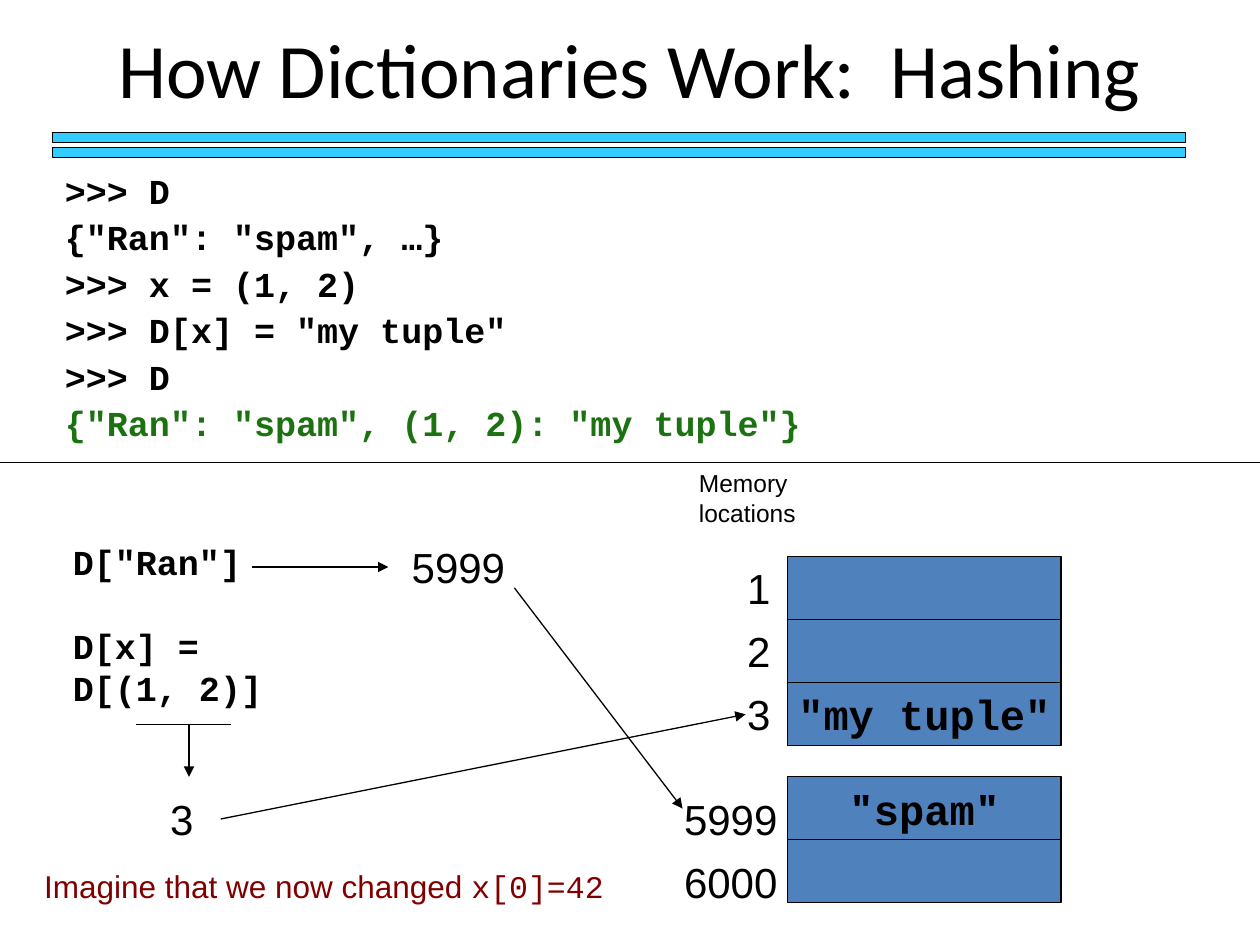
from lxml.etree import SubElement as Sub
from pptx import Presentation as Deck
from pptx.dml.color import RGBColor as Rgb
from pptx.enum.shapes import MSO_CONNECTOR as Wire, MSO_SHAPE as Form
from pptx.enum.text import MSO_ANCHOR as Anchor, PP_ALIGN as Align
from pptx.oxml.ns import qn
from pptx.util import Cm, Pt

BLACK = Rgb(0, 0, 0)
GREEN = Rgb(0x1C, 0x72, 0x10)
RED = Rgb(0x80, 0, 0)
CYAN = Rgb(0x33, 0xCC, 0xFF)
BLUE = Rgb(0x4F, 0x81, 0xBD)

PLAIN = {"name": "Arial", "size": Pt(24), "color": BLACK}
HEAD = {**PLAIN, "name": "Calibri", "size": Pt(44)}
SMALL = {**PLAIN, "size": Pt(14)}
CODE = {**PLAIN, "name": "Courier New", "size": Pt(20), "bold": True}
CELL = {**CODE, "size": Pt(24)}
QUOTE = {**CELL, "name": "Noto Sans Mono"}
NOTE = {**PLAIN, "size": Pt(18), "color": RED}

STEP = 1.27
LEFT = 15.88
TOP = 11.22
LOW = 15.66


def apply(item, form):
    for key, value in form.items():
        if key == "color":
            item.color.rgb = value
        else:
            setattr(item, key, value)


def write(frame, lines, para=None):
    for i, line in enumerate(lines):
        p = frame.paragraphs[0] if i == 0 else frame.add_paragraph()
        apply(p, para or {})
        for text, form in line:
            run = p.add_run()
            run.text = text
            apply(run.font, form)


def label(slide, box, lines, para=None, wrap=False, anchor=Anchor.TOP):
    frame = slide.shapes.add_textbox(*map(Cm, box)).text_frame
    apply(frame, {"word_wrap": wrap, "vertical_anchor": anchor})
    write(frame, lines, para)
    return frame


def block(shapes, box, fill, runs=()):
    shape = shapes.add_shape(Form.RECTANGLE, *map(Cm, box))
    shape.shadow.inherit = False
    shape.fill.solid()
    shape.fill.fore_color.rgb = fill
    apply(shape.line, {"color": BLACK, "width": Pt(0.75)})
    if runs:
        frame = shape.text_frame
        apply(frame, {"word_wrap": False, "vertical_anchor": Anchor.MIDDLE})
        write(frame, [runs], {"alignment": Align.CENTER})


def link(slide, ends, arrow=True):
    line = slide.shapes.add_connector(Wire.STRAIGHT, *map(Cm, ends))
    apply(line.line, {"color": BLACK, "width": Pt(0.75)})
    if arrow:
        Sub(line.line._get_or_add_ln(), qn("a:tailEnd"), type="triangle")
    Sub(line._element.spPr, qn("a:effectLst"))


def header(slide):
    label(slide, (1.9, 0.2, 21.6, 2.34),
          [[("How Dictionaries Work:  Hashing", HEAD)]],
          {"alignment": Align.CENTER}, True, Anchor.MIDDLE)
    group = slide.shapes.add_group_shape()
    for top in (2.67, 2.97):
        block(group.shapes, (1.06, top, 22.84, 0.2), CYAN)


def session(slide):
    lines = [">>> D", '{"Ran": "spam", …}', ">>> x = (1, 2)",
             '>>> D[x] = "my tuple"', ">>> D"]
    rows = [[(line, CODE)] for line in lines]
    rows.append([('{"Ran": "spam", (1, 2): "my tuple"}',
                  {**CODE, "color": GREEN})])
    label(slide, (1.06, 3.38, 22.22, 5.92), rows,
          {"line_spacing": 0.9, "space_before": Pt(5)}, True)
    link(slide, (0, 9.32, 25.4, 9.32), False)


def memory(slide):
    label(slide, (13.84, 9.32, 2.46, 1.45),
          [[("Memory", SMALL)], [("locations", SMALL)]])
    tuple_runs = [('"my tuple"', CELL)]
    spam_runs = [('"', QUOTE), ("spam", CELL), ('"', QUOTE)]
    banks = [
        (TOP, 0, 14.81, 0.99, [("1", ()), ("2", ()), ("3", tuple_runs)]),
        (LOW, 0.21, 13.54, 2.39, [("5999", spam_runs), ("6000", ())]),
    ]
    for top, drop, left, width, cells in banks:
        for i, (name, runs) in enumerate(cells):
            y = top + i * STEP
            block(slide.shapes, (LEFT, y, 5.51, STEP), BLUE, runs)
            label(slide, (left, y + drop, width, STEP), [[(name, PLAIN)]])


def lookup(slide):
    frame = label(slide, (1.22, 10.77, 4.37, 5.38),
                  [[(t, CODE)] for t in ('D["Ran"]', "D[x] =", "D[(1, 2)]")])
    frame.paragraphs[1].space_before = Pt(24)
    label(slide, (8.05, 10.8, 4.17, STEP), [[("5999", PLAIN)]], wrap=True)
    label(slide, (3.18, 15.88, 0.99, STEP), [[("3", PLAIN)]])
    for ends in ((5.08, 11.43, 7.83, 11.43), (10.37, 11.85, 13.76, 16.3),
                 (3.81, 14.6, 3.81, 15.66), (4.45, 16.51, 15.03, 14.4)):
        link(slide, ends)
    link(slide, (2.75, 14.6, 4.66, 14.6), False)
    label(slide, (0.64, 17.36, 11.91, 1.02),
          [[("Imagine that we now changed ", NOTE),
            ("x[0]=42", {**NOTE, "name": "Courier New"})]])


def main():
    deck = Deck()
    apply(deck, {"slide_width": Cm(25.4), "slide_height": Cm(19.05)})
    slide = deck.slides.add_slide(deck.slide_layouts[6])
    for part in (header, session, memory, lookup):
        part(slide)
    deck.save("out.pptx")


if __name__ == "__main__":
    main()
